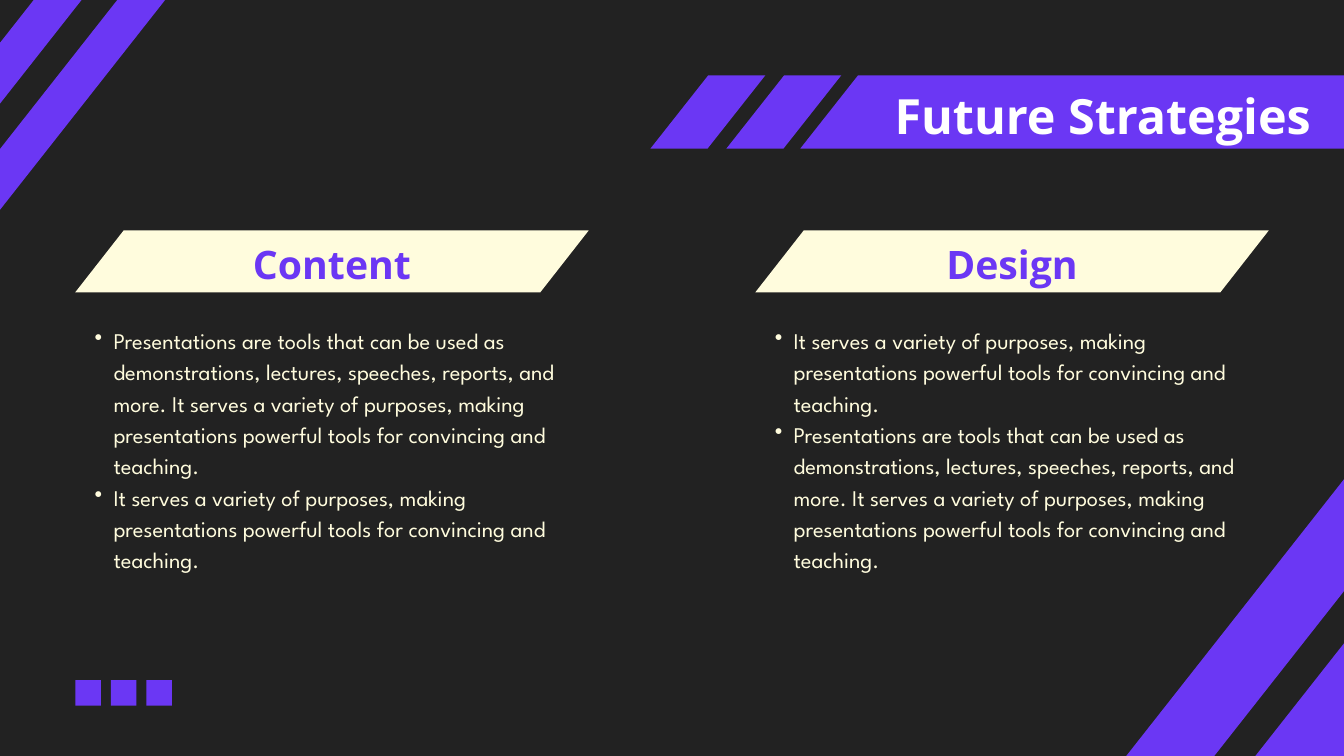
from lxml import etree
from pptx import Presentation
from pptx import util as u
from pptx.dml.color import RGBColor
from pptx.enum import shapes, text
from pptx.oxml.ns import qn

COLORS = {"dark": "222222", "violet": "6B37F4", "cream": "FFFCDD", "white": "FFFFFF"}
HEADING, BODY = "Open Sans", "League Spartan"
ALIGN = text.PP_ALIGN

PURPOSES = ("It serves a variety of purposes, making presentations powerful "
            "tools for convincing and teaching.")
TOOLS = ("Presentations are tools that can be used as demonstrations, lectures, "
         "speeches, reports, and more. " + PURPOSES)


def rgb(name):
    return RGBColor.from_string(COLORS[name])


def add_bullet(p):
    p.level = 1
    pPr = p._p.get_or_add_pPr()
    pPr.set("marL", str(u.Inches(0.57)))
    pPr.set("indent", str(u.Inches(-0.28)))
    etree.SubElement(pPr, qn("a:buChar")).set("char", "•")


def write(tf, lines, font=HEADING, size=24, color="cream", bold=False,
          align=ALIGN.LEFT, bullets=False):
    """Fill a text frame, one paragraph per line, at 1.4 line spacing."""
    tf.word_wrap = True
    tf.auto_size = text.MSO_AUTO_SIZE.NONE
    tf.vertical_anchor = text.MSO_ANCHOR.TOP
    tf.margin_left = tf.margin_right = tf.margin_top = tf.margin_bottom = 0
    for i, line in enumerate(lines):
        p = tf.paragraphs[0] if i == 0 else tf.add_paragraph()
        p.alignment = align
        p.line_spacing = u.Pt(round(size * 1.4, 1))
        p.space_before = u.Pt(0)
        if bullets:
            add_bullet(p)
        r = p.add_run()
        r.text = line
        r.font.name, r.font.size, r.font.bold = font, u.Pt(size), bold
        r.font.color.rgb = rgb(color)


class Deck:
    def __init__(self):
        self.prs = Presentation()
        self.prs.slide_width, self.prs.slide_height = u.Inches(20), u.Inches(11.25)
        self.s = self.prs.slides.add_slide(self.prs.slide_layouts[5])
        fill = self.s.background.fill
        fill.solid()
        fill.fore_color.rgb = rgb("dark")

    def shape(self, kind, x, y, w, h, color="violet"):
        sp = self.s.shapes.add_shape(kind, *map(u.Inches, (x, y, w, h)))
        sp.shadow.inherit = False
        sp.fill.solid()
        sp.fill.fore_color.rgb = rgb(color)
        sp.line.fill.background()
        return sp

    def slanted(self, x, y, w, h, slant, color="violet"):
        sp = self.shape(shapes.MSO_SHAPE.PARALLELOGRAM, x, y, w, h, color)
        sp.adjustments[0] = slant / min(w, h)

    def box(self, x, y, w, h, rotation=0):
        sp = self.shape(shapes.MSO_SHAPE.RECTANGLE, x, y, w, h)
        sp.rotation = rotation

    def label(self, x, y, w, h, lines, **style):
        sp = self.s.shapes.add_textbox(*map(u.Inches, (x, y, w, h)))
        write(sp.text_frame, lines, **style)

    def title(self, x, y, w, h, line, **style):
        """Place the title placeholder in front of the shapes drawn so far."""
        sp = self.s.shapes.title
        sp.left, sp.top, sp.width, sp.height = map(u.Inches, (x, y, w, h))
        write(sp.text_frame, [line], **style)
        sp.element.getparent().append(sp.element)


def main():
    deck = Deck()

    for x, w in ((10.81, 1.71), (9.68, 1.71), (11.91, 11.16)):
        deck.slanted(x, 1.12, w, 1.09, slant=0.86)
    deck.title(12.13, 1.13, 7.38, 0.97, "Future Strategies",
               size=52, color="white", bold=True, align=ALIGN.RIGHT)

    columns = ((1.12, "Content", (TOOLS, PURPOSES)),
               (11.24, "Design", (PURPOSES, TOOLS)))
    for x, heading, points in columns:
        deck.slanted(x, 3.43, 7.64, 0.92, slant=0.72, color="cream")
        deck.label(x + 1.31, 3.46, 5.02, 0.78, [heading],
                   size=42, color="violet", bold=True, align=ALIGN.CENTER)
        deck.label(x, 4.8, 7.64, 3.64, points, font=BODY, bullets=True)

    corner_stripes = ((0.85, -2.35, 0.56, 7.17), (0, -2.85, 0.56, 7.17),
                      (17.75, 6.1, 1.03, 8.14), (20.38, 1.37, 3.38, 16.61))
    for stripe in corner_stripes:
        deck.box(*stripe, rotation=38.2)

    for i in range(3):
        deck.box(1.12 + i * 0.53, 10.12, 0.38, 0.38)

    deck.prs.save("out.pptx")


if __name__ == "__main__":
    main()
